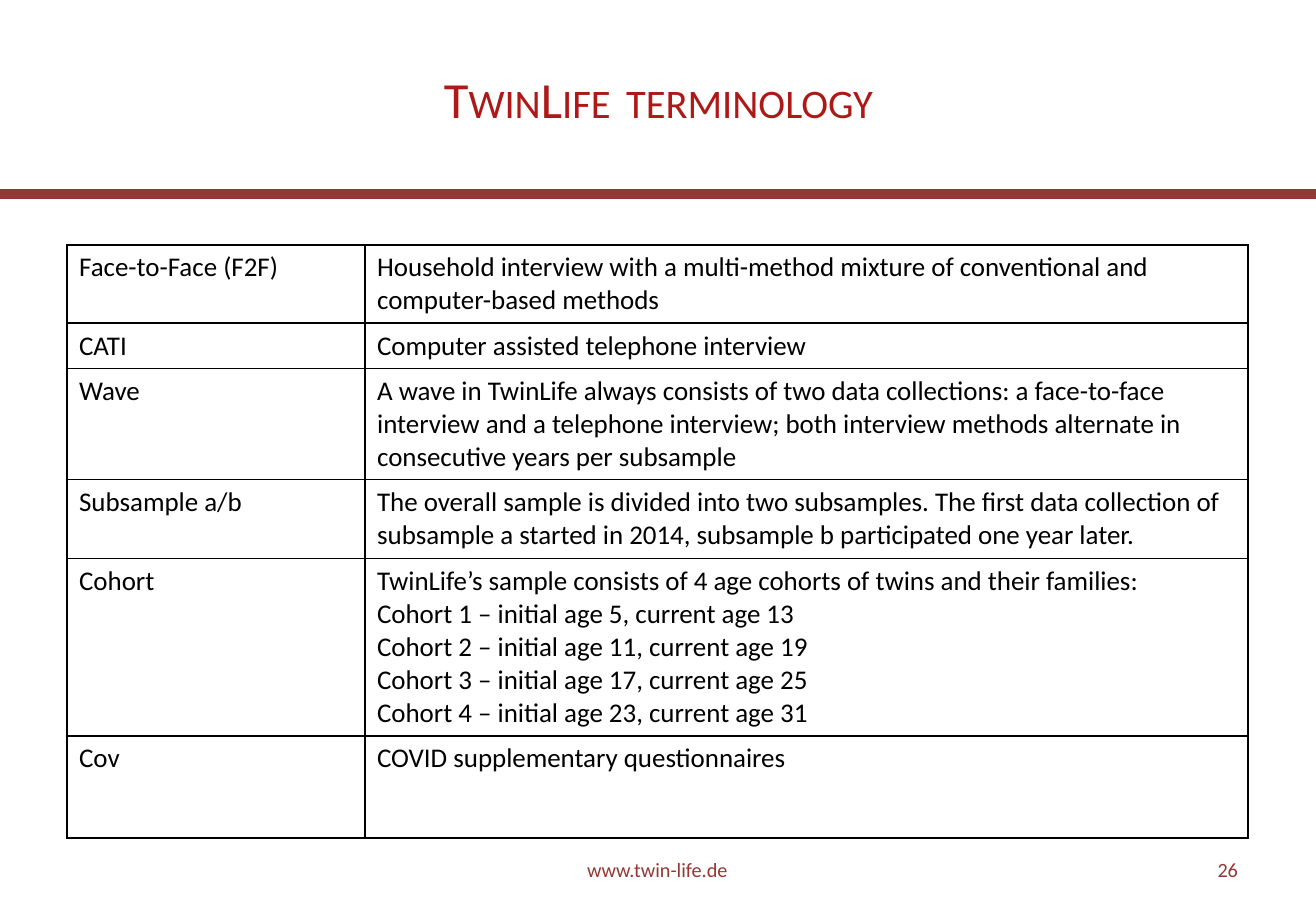
from lxml import etree
from pptx import Presentation
from pptx.dml.color import RGBColor
from pptx.enum.shapes import MSO_CONNECTOR as Connector
from pptx.enum.text import MSO_ANCHOR as Anchor, PP_ALIGN as Align
from pptx.oxml import parse_xml
from pptx.oxml.ns import nsdecls, qn
from pptx.util import Emu, Pt

EMU_PER_PX = 7526
FONT = "Calibri"
BLACK, MAROON, RED = "000000", "953735", "AD1917"
TITLE_RUNS = [("TwinLife", 30, RED, True), (" ", 40, MAROON, False),
              ("terminology", 30, RED, True)]
COLUMN_WIDTHS = [298, 883]
TERMS = [
    (78, "Face-to-Face (F2F)",
     ["Household interview with a multi-method mixture of conventional and "
      "computer-based methods"]),
    (45, "CATI", ["Computer assisted telephone interview"]),
    (111, "Wave",
     ["A wave in TwinLife always consists of two data collections: a face-to-face "
      "interview and a telephone interview; both interview methods alternate in "
      "consecutive years per subsample"]),
    (79, "Subsample a/b",
     ["The overall sample is divided into two subsamples. The first data collection of "
      "subsample a started in 2014, subsample b participated one year later."]),
    (177, "Cohort",
     ["TwinLife’s sample consists of 4 age cohorts of twins and their families:"]
     + [f"Cohort {number} – initial age {age}, current age {age + 8}"
        for number, age in enumerate(range(5, 24, 6), 1)]),
    (102, "Cov", ["COVID supplementary questionnaires"]),
]


def px(*lengths):
    """Turn whole pixels into EMU lengths."""
    return [Emu(length * EMU_PER_PX) for length in lengths]


def color(value):
    """Turn a hex string into a colour."""
    return RGBColor.from_string(value)


def set_all(target, values):
    """Set every attribute named in a dict."""
    for name, value in values.items():
        setattr(target, name, value)


def add_run(paragraph, text, size, hex_color):
    """Add a formatted run to a paragraph."""
    run = paragraph.add_run()
    run.text = text
    set_all(run.font, {"name": FONT, "size": Pt(size)})
    run.font.color.rgb = color(hex_color)
    return run


def add_title(slide):
    """Fill the title placeholder with small caps."""
    title = slide.shapes.title
    set_all(title, dict(zip(("left", "top", "width", "height"), px(51, 16, 1215, 152))))
    set_all(title.text_frame, {"vertical_anchor": Anchor.MIDDLE, "word_wrap": True})
    paragraph = title.text_frame.paragraphs[0]
    paragraph.alignment = Align.CENTER
    for text, size, hex_color, small_caps in TITLE_RUNS:
        run = add_run(paragraph, text, size, hex_color)
        if small_caps:
            run.font._element.set("cap", "small")


def add_rule(slide):
    """Draw the thick rule under the title."""
    rule = slide.shapes.add_connector(Connector.STRAIGHT, *px(0, 194, 1316, 194))
    rule.line.color.rgb = color(MAROON)
    rule.line.width = Pt(6)
    etree.SubElement(rule._element.spPr, qn("a:effectLst"))


def add_borders(cell):
    """Give a cell a thin black line on each side."""
    properties = cell._tc.get_or_add_tcPr()
    for index, side in enumerate("LRTB"):
        properties.insert(index, parse_xml(
            f'<a:ln{side} {nsdecls("a")} w="{Pt(1)}"><a:solidFill>'
            f'<a:srgbClr val="{BLACK}"/></a:solidFill></a:ln{side}>'))


def fill_cell(cell, lines):
    """Write one paragraph per line into a bordered cell."""
    cell.fill.background()
    add_borders(cell)
    frame = cell.text_frame
    for index, line in enumerate(lines):
        paragraph = frame.add_paragraph() if index else frame.paragraphs[0]
        add_run(paragraph, line, 16, BLACK)


def add_terms(slide):
    """Build the table of terms and definitions."""
    heights = [height for height, _, _ in TERMS]
    table = slide.shapes.add_table(
        len(TERMS), len(COLUMN_WIDTHS),
        *px(67, 245, sum(COLUMN_WIDTHS), sum(heights))).table
    set_all(table, {"first_row": False, "horz_banding": False})
    for column, width in zip(table.columns, px(*COLUMN_WIDTHS)):
        column.width = width
    for row, height, (_, term, definition) in zip(table.rows, px(*heights), TERMS):
        row.height = height
        fill_cell(row.cells[0], [term])
        fill_cell(row.cells[1], definition)


def add_footer(slide, box, text, alignment):
    """Add one footer text box."""
    frame = slide.shapes.add_textbox(*px(*box)).text_frame
    set_all(frame, {"word_wrap": True, "vertical_anchor": Anchor.MIDDLE})
    frame.paragraphs[0].alignment = alignment
    add_run(frame.paragraphs[0], text, 12, MAROON)


def main():
    """Build and save the slide."""
    presentation = Presentation()
    set_all(presentation, dict(zip(("slide_width", "slide_height"), px(1316, 911))))
    slide = presentation.slides.add_slide(presentation.slide_layouts[5])
    add_rule(slide)
    add_title(slide)
    add_terms(slide)
    add_footer(slide, (449, 845, 417, 49), "www.twin-life.de", Align.CENTER)
    add_footer(slide, (943, 845, 307, 49), "26", Align.RIGHT)
    presentation.save("out.pptx")


if __name__ == "__main__":
    main()
